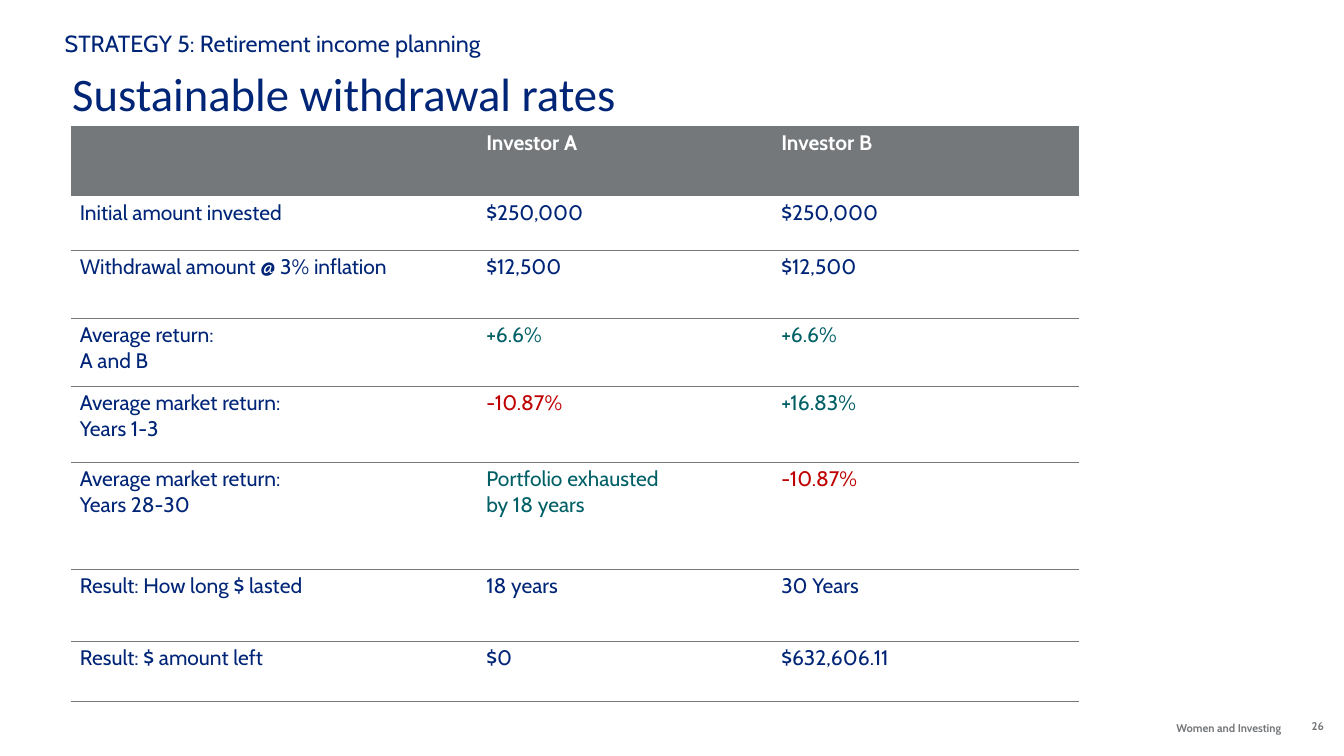
from lxml import etree
from pptx import Presentation
from pptx.dml.color import RGBColor
from pptx.enum.text import MSO_ANCHOR, MSO_AUTO_SIZE, PP_ALIGN
from pptx.oxml import parse_xml
from pptx.util import Cm, Pt

LEFT, RIGHT, CENTER = PP_ALIGN.LEFT, PP_ALIGN.RIGHT, PP_ALIGN.CENTER
TOP, MIDDLE, BOTTOM = MSO_ANCHOR.TOP, MSO_ANCHOR.MIDDLE, MSO_ANCHOR.BOTTOM
NAVY = RGBColor(0x00, 0x25, 0x77)
GREY = RGBColor(0x75, 0x78, 0x7B)
TEAL = RGBColor(0x01, 0x5F, 0x66)
RED = RGBColor(0xC0, 0x00, 0x00)
WHITE = RGBColor(0xFF, 0xFF, 0xFF)
PLAIN = "{2D5ABB26-0587-4C30-8999-92F81FD0307C}"
NS = "http://schemas.openxmlformats.org/drawingml/2006/main"


def write(frame, text, size, color, bold=False, align=LEFT, face="Cabin"):
    """Fill a text frame: a newline starts a paragraph, a \\v breaks a line."""
    for i, para in enumerate(text.split("\n")):
        p = frame.add_paragraph() if i else frame.paragraphs[0]
        p.alignment = align
        for j, line in enumerate(para.split("\v")):
            if j:
                p.add_line_break()
            run = p.add_run()
            run.text = line
            font = run.font
            font.name, font.size, font.bold = face, Pt(size), bold
            font.color.rgb = color


def rule(cell):
    """Draw a thin grey line under a table cell."""
    line = parse_xml(
        f'<a:lnB xmlns:a="{NS}" w="{Pt(0.5)}"><a:solidFill>'
        f'<a:srgbClr val="{GREY}"/></a:solidFill></a:lnB>')
    cell.fill.background()
    cell.fill._xPr.insert(0, line)


deck = Presentation()
deck.slide_width, deck.slide_height = Cm(40.64), Cm(22.86)
slide = deck.slides.add_slide(deck.slide_layouts[5])

# Title
title = slide.shapes.title
title.left, title.top = Cm(1.7), Cm(0.56)
title.width, title.height = Cm(17.4), Cm(1.32)
frame = title.text_frame
frame.word_wrap = True
frame.auto_size = MSO_AUTO_SIZE.NONE
frame.vertical_anchor = BOTTOM
write(frame, "STRATEGY 5: Retirement income planning", 20, NAVY)
frame.paragraphs[0].line_spacing = 0.9

# Heading, footer and page number
boxes = [
    ("Sustainable withdrawal rates", (0.53, 1.85, 19.74, 1.96),
     40, NAVY, False, CENTER, "Calibri", TOP),
    ("Women and Investing", (24.84, 21.16, 14.15, 1.7),
     9.6, GREY, True, RIGHT, "Cabin", MIDDLE),
    ("26", (38.58, 21.64, 1.7, 1.22),
     9.6, GREY, True, RIGHT, "Cabin", TOP),
]
for text, place, size, color, bold, align, face, anchor in boxes:
    box = slide.shapes.add_textbox(*map(Cm, place))
    box.text_frame.word_wrap = True
    box.text_frame.vertical_anchor = anchor
    write(box.text_frame, text, size, color, bold, align, face)

# Comparison table
rows = [
    ("", "Investor A", "Investor B"),
    ("Initial amount invested", "$250,000", "$250,000"),
    ("Withdrawal amount @ 3% inflation", "$12,500", "$12,500"),
    ("Average return: \vA and B", "+6.6%", "+6.6%"),
    ("Average market return: \vYears 1-3", "-10.87%", "+16.83%"),
    ("Average market return:\nYears 28-30",
     "Portfolio exhausted \vby 18 years", "-10.87%"),
    ("Result: How long $ lasted", "18 years", "30 Years"),
    ("Result: $ amount left", "$0", "$632,606.11"),
]
widths = [12.29, 8.92, 9.25]
heights = [2.13, 1.63, 2.06, 2.06, 2.29, 3.25, 2.16, 1.83]
tints = {"+": TEAL, "P": TEAL, "-": RED}

table = slide.shapes.add_table(
    len(rows), len(widths), Cm(2.16), Cm(3.8),
    Cm(sum(widths)), Cm(sum(heights))).table
table.horz_banding = False
style = next(table._tbl.iter(etree.QName(NS, "tableStyleId").text))
style.text = PLAIN
for col, width in zip(table.columns, widths):
    col.width = Cm(width)
for r, (row, height) in enumerate(zip(rows, heights)):
    table.rows[r].height = Cm(height)
    for c, text in enumerate(row):
        cell = table.cell(r, c)
        if r == 0:
            cell.fill.solid()
            cell.fill.fore_color.rgb = GREY
            color = WHITE
        else:
            rule(cell)
            color = tints.get(text[0], NAVY)
        write(cell.text_frame, text, 18, color, bold=r == 0)

deck.save("out.pptx")
